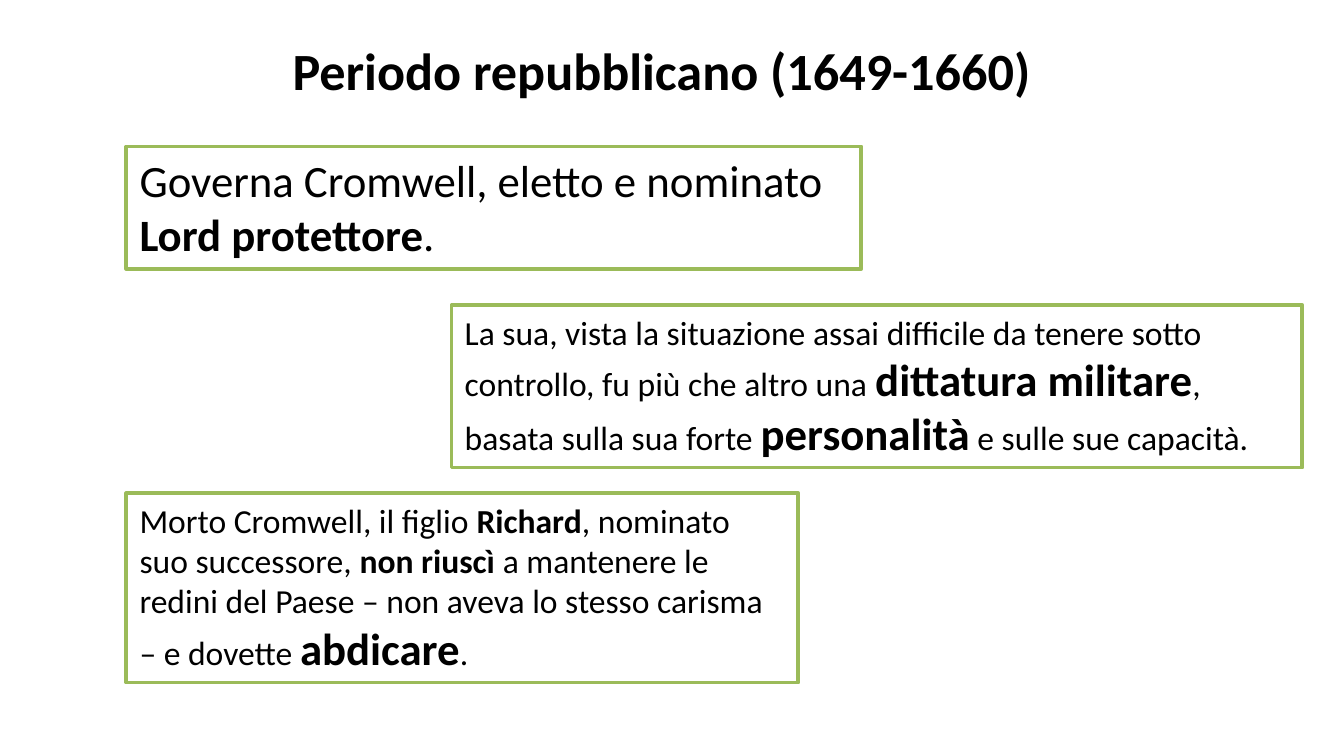
from typing import NamedTuple

from pptx import Presentation
from pptx.dml.color import RGBColor
from pptx.enum.shapes import MSO_SHAPE
from pptx.enum.text import MSO_ANCHOR, PP_ALIGN
from pptx.util import Pt

FONT = "Calibri"
BLACK = "000000"
WHITE = "FFFFFF"
GREEN = "9BBB59"
LEFT_MARGIN = 67.7


class TextRun(NamedTuple):
    text: str
    size: float = 18
    bold: bool = False


class TextCard(NamedTuple):
    left: float
    top: float
    width: float
    height: float
    runs: list[TextRun]


CARDS = [
    TextCard(LEFT_MARGIN, 78.5, 393.8, 65.5, [
        TextRun("Governa Cromwell, eletto e nominato ", 24),
        TextRun("Lord protettore", 24, True),
        TextRun(".", 24),
    ]),
    TextCard(241.9, 163.4, 455.8, 87.1, [
        TextRun("La sua, vista la situazione assai difficile da tenere sotto "
                "controllo, fu più che altro una "),
        TextRun("dittatura militare", 24, True),
        TextRun(", basata sulla sua forte "),
        TextRun("personalità", 24, True),
        TextRun(" e sulle sue capacità."),
    ]),
    TextCard(LEFT_MARGIN, 264.2, 360, 101.5, [
        TextRun("Morto Cromwell, il figlio "),
        TextRun("Richard", bold=True),
        TextRun(", nominato suo successore, "),
        TextRun("non riuscì ", bold=True),
        TextRun("a mantenere le redini del Paese – non aveva lo stesso carisma "
                "– e dovette "),
        TextRun("abdicare", 24, True),
        TextRun("."),
    ]),
]


def color(value: str) -> RGBColor:
    return RGBColor.from_string(value)


def draw_title(slide, text: str) -> None:
    title = slide.shapes.title
    title.left, title.top, title.width, title.height = Pt(146.2), Pt(16.6), Pt(416.2), Pt(41.2)
    title.text_frame.text = text
    title.text_frame.word_wrap = True
    title.text_frame.vertical_anchor = MSO_ANCHOR.TOP
    paragraph = title.text_frame.paragraphs[0]
    paragraph.alignment = PP_ALIGN.CENTER
    paragraph.font.name = FONT
    paragraph.font.size = Pt(28)
    paragraph.font.bold = True
    paragraph.font.color.rgb = color(BLACK)


def draw_card(slide, card: TextCard) -> None:
    shape = slide.shapes.add_shape(
        MSO_SHAPE.RECTANGLE, Pt(card.left), Pt(card.top), Pt(card.width), Pt(card.height)
    )
    shape.shadow.inherit = False
    shape.fill.solid()
    shape.fill.fore_color.rgb = color(WHITE)
    shape.line.color.rgb = color(GREEN)
    shape.line.width = Pt(2)
    shape.text_frame.word_wrap = True
    shape.text_frame.vertical_anchor = MSO_ANCHOR.TOP
    paragraph = shape.text_frame.paragraphs[0]
    paragraph.alignment = PP_ALIGN.LEFT
    paragraph.font.name = FONT
    paragraph.font.color.rgb = color(BLACK)
    for text_run in card.runs:
        run = paragraph.add_run()
        run.text = text_run.text
        run.font.size = Pt(text_run.size)
        run.font.bold = text_run.bold
        run.font.name = FONT
        run.font.color.rgb = color(BLACK)


def main() -> None:
    presentation = Presentation()
    presentation.slide_width = Pt(720)
    presentation.slide_height = Pt(405)
    slide = presentation.slides.add_slide(presentation.slide_layouts[5])
    draw_title(slide, "Periodo repubblicano (1649-1660)")
    for card in CARDS:
        draw_card(slide, card)
    presentation.save("out.pptx")


if __name__ == "__main__":
    main()
